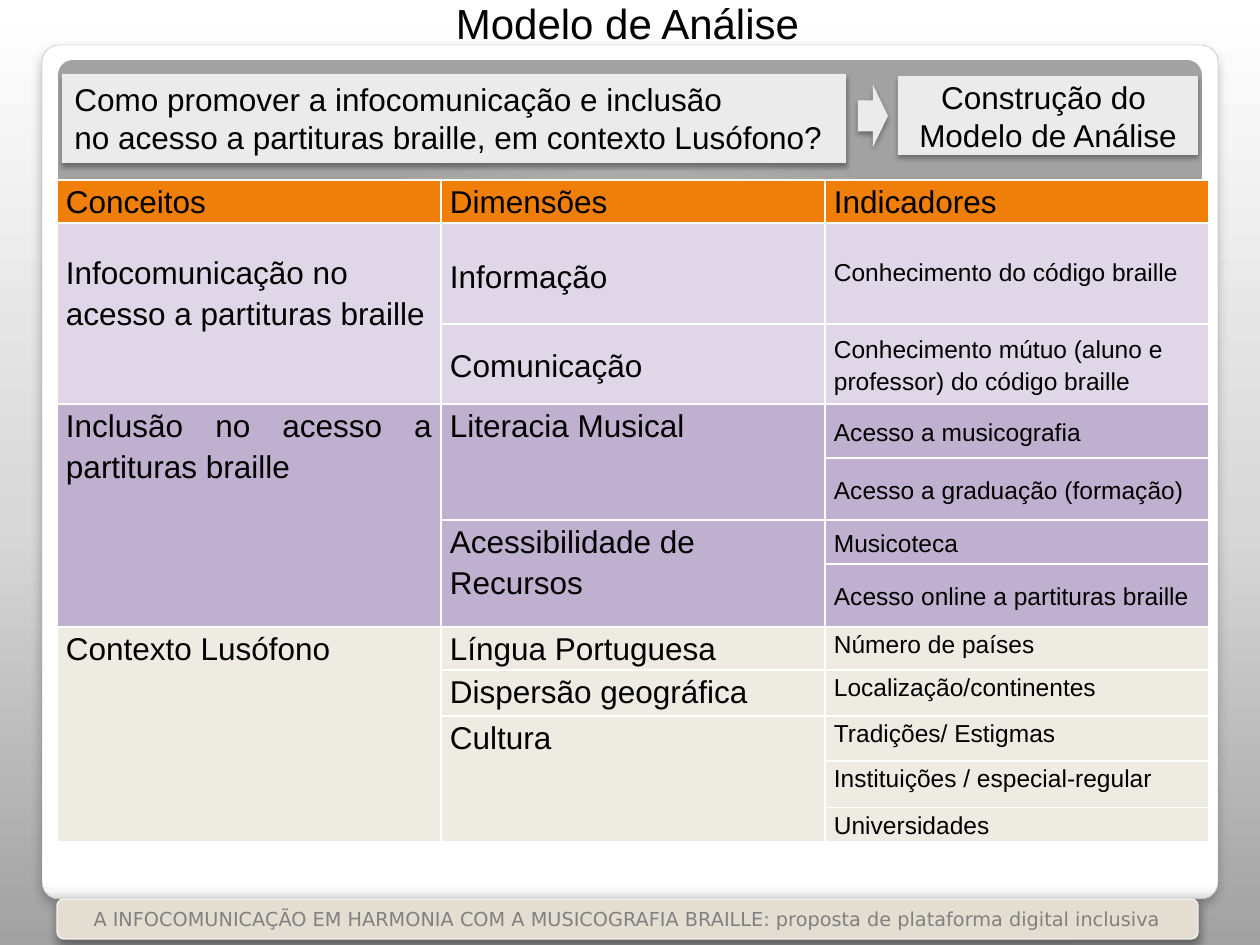
"""Build the analysis model slide: research question, arrow and concept table."""
from lxml import etree
from pptx import Presentation
from pptx.dml.color import RGBColor
from pptx.enum.shapes import MSO_SHAPE
from pptx.enum.text import MSO_ANCHOR, MSO_AUTO_SIZE, PP_ALIGN
from pptx.oxml.ns import qn
from pptx.util import Emu, Pt

ROUND, RECT, ARROW = MSO_SHAPE.ROUNDED_RECTANGLE, MSO_SHAPE.RECTANGLE, MSO_SHAPE.RIGHT_ARROW
TOP, MIDDLE = MSO_ANCHOR.TOP, MSO_ANCHOR.MIDDLE
LEFT, CENTER, JUSTIFY = PP_ALIGN.LEFT, PP_ALIGN.CENTER, PP_ALIGN.JUSTIFY
PX = 914400 / 126
COLORS = {
    "white": "FFFFFF", "text": "000000", "box": "EBEBEB", "panel line": "A4A4A4",
    "footer": "E3DED1", "footer line": "F2F2F2", "footer text": "808080",
    "header": "F07F09", "lilac": "DFD7E7", "violet": "BFB0CF", "sand": "EEEBE3",
}


def paint_gradient(owner, stops, direction, **settings):
    owner.fill.gradient()
    grad = next(owner.element.iter(qn("a:gradFill")))
    for child in list(grad):
        grad.remove(child)
    stop_list = etree.SubElement(grad, qn("a:gsLst"))
    for position, color in stops:
        stop = etree.SubElement(stop_list, qn("a:gs"), pos=str(position * 1000))
        etree.SubElement(stop, qn("a:srgbClr"), val=color)
    return etree.SubElement(grad, qn(direction), **settings)


def add_box(preset, frame, fill=None, line=None, shadow=None):
    box = page.shapes.add_shape(preset, *[Emu(round(n * PX)) for n in frame])
    box.shadow.inherit = False
    if fill:
        box.fill.solid()
        box.fill.fore_color.rgb = RGBColor.from_string(COLORS[fill])
    if line:
        box.line.color.rgb = RGBColor.from_string(COLORS[line[0]])
        box.line.width = Pt(line[1])
    else:
        box.line.fill.background()
    if shadow:
        opacity, blur, distance = shadow
        effects = box.element.spPr.find(qn("a:effectLst"))
        outer = etree.SubElement(
            effects, qn("a:outerShdw"), blurRad=str(Pt(blur)), dist=str(Pt(distance)),
            dir="5400000", algn="ctr", rotWithShape="0")
        tint = etree.SubElement(outer, qn("a:srgbClr"), val=COLORS["text"])
        etree.SubElement(tint, qn("a:alpha"), val=str(opacity * 1000))
    return box


deck = Presentation()
deck.slide_width, deck.slide_height = Emu(round(1260 * PX)), Emu(round(945 * PX))
page = deck.slides.add_slide(deck.slide_layouts[5])
page.background.fill.gradient()
background = next(page.element.iter(qn("p:bgPr")))
page.background.fill.gradient_angle = 90
stops = background.find(qn("a:gradFill")).find(qn("a:gsLst"))
for stop in list(stops):
    stops.remove(stop)
for position, color in ((0, "A2A2A2"), (45, "D8D8D8"), (100, "FFFFFF")):
    stop = etree.SubElement(stops, qn("a:gs"), pos=str(position * 1000))
    etree.SubElement(stop, qn("a:srgbClr"), val=color)

panel = add_box(ROUND, (42, 45, 1176, 854), line=("panel line", 0.16), shadow=(25, 6, 4))
panel.adjustments[0] = 0.02
paint_gradient(panel, ((0, "FFFFFF"), (98, "FFFFFF"), (99, "F7F7F7"), (100, "DADADA")),
               "a:lin", ang="5400000", scaled="0")
band = add_box(ROUND, (58, 60, 1144, 756))
band.adjustments[0] = 0.02
glow = paint_gradient(band, ((0, "FFFFFF"), (55, "E1E1E1"), (100, "A2A2A2")),
                      "a:path", path="circle")
etree.SubElement(glow, qn("a:fillToRect"), l="50000", t="175000", r="50000", b="-75000")

footer = add_box(ROUND, (57, 899, 1141, 40), "footer", ("footer line", 0.75), (40, 5.2, 3))
title = page.shapes.title
title.left, title.top, title.width, title.height = [
    Emu(round(n * PX)) for n in (441, -9, 373, 63)]
page.shapes.element.append(title.element)
box_shadow = (35, 3.1, 1.8)
goal = add_box(RECT, (898, 76, 300, 79), "box", shadow=box_shadow)
question = add_box(RECT, (62, 74, 784, 89), "box", shadow=box_shadow)
add_box(ARROW, (858, 85, 30, 62), "box", shadow=box_shadow)

texts = (
    (footer, CENTER, MIDDLE, 11, "DejaVu Sans", "footer text", (
        "A INFOCOMUNICAÇÃO EM HARMONIA COM A MUSICOGRAFIA BRAILLE: "
        "proposta de plataforma digital inclusiva",)),
    (title, CENTER, TOP, 24, "Arial", "text", ("Modelo de Análise",)),
    (goal, CENTER, MIDDLE, 18, "Arial", "text", ("Construção do ", "Modelo de Análise")),
    (question, JUSTIFY, TOP, 18, "Arial", "text", (
        "Como promover a infocomunicação e inclusão ",
        "no acesso a partituras braille, em contexto Lusófono?")),
)
for box, align, anchor, size, font, color, lines in texts:
    frame = box.text_frame
    frame.word_wrap = box is not title
    frame.auto_size = MSO_AUTO_SIZE.NONE
    frame.vertical_anchor = anchor
    para = frame.paragraphs[0]
    for index, line in enumerate(lines):
        if index and box is goal:
            para.add_line_break()
        elif index:
            para = frame.add_paragraph()
        para.alignment = align
        span = para.add_run()
        span.text = line
        span.font.size = Pt(size)
        span.font.name = font
        span.font.color.rgb = RGBColor.from_string(COLORS[color])

row_heights = (43, 101, 80, 54, 62, 44, 63, 43, 46, 45, 47, 34)
row_fills = ["header"] + ["lilac"] * 2 + ["violet"] * 4 + ["sand"] * 5
table = page.shapes.add_table(
    len(row_heights), 3, *[Emu(round(n * PX)) for n in (57, 180, 1152, sum(row_heights))]).table
table.first_row = table.horz_banding = False
for column in table.columns:
    column.width = Emu(round(384 * PX))
for row, height in zip(table.rows, row_heights):
    row.height = Emu(round(height * PX))
for row, fill in zip(table.rows, row_fills):
    for cell in row.cells:
        properties = cell._tc.get_or_add_tcPr()
        for side in ("L", "R", "T", "B"):
            border = etree.SubElement(properties, qn("a:ln" + side), w=str(Pt(1)))
            paint = etree.SubElement(border, qn("a:solidFill"))
            etree.SubElement(paint, qn("a:srgbClr"), val=COLORS["white"])
        cell.fill.solid()
        cell.fill.fore_color.rgb = RGBColor.from_string(COLORS[fill])

entries = (
    (0, 0, 1, 18, TOP, 0, "Conceitos"),
    (0, 1, 1, 18, TOP, 0, "Dimensões"),
    (0, 2, 1, 18, TOP, 0, "Indicadores"),
    (1, 0, 2, 18, TOP, 28, "Infocomunicação no acesso a partituras braille"),
    (1, 1, 1, 18, TOP, 32, "Informação"),
    (1, 2, 1, 14, TOP, 32, "Conhecimento do código braille"),
    (2, 1, 1, 18, MIDDLE, 0, "Comunicação"),
    (2, 2, 1, 14, MIDDLE, 0, "Conhecimento mútuo (aluno e professor) do código braille"),
    (3, 0, 4, 18, TOP, 0, "Inclusão no acesso a partituras braille"),
    (3, 1, 2, 18, TOP, 0, "Literacia Musical"),
    (3, 2, 1, 14, MIDDLE, 0, "Acesso a musicografia"),
    (4, 2, 1, 14, MIDDLE, 0, "Acesso a graduação (formação)"),
    (5, 1, 2, 18, TOP, 0, "Acessibilidade de Recursos"),
    (5, 2, 1, 14, MIDDLE, 0, "Musicoteca"),
    (6, 2, 1, 14, MIDDLE, 0, "Acesso online a partituras braille"),
    (7, 0, 5, 18, TOP, 0, "Contexto Lusófono"),
    (7, 1, 1, 18, TOP, 0, "Língua Portuguesa"),
    (7, 2, 1, 14, TOP, 0, "Número de países"),
    (8, 1, 1, 18, TOP, 0, "Dispersão geográfica"),
    (8, 2, 1, 14, TOP, 0, "Localização/continentes"),
    (9, 1, 3, 18, TOP, 0, "Cultura"),
    (9, 2, 1, 14, TOP, 0, "Tradições/ Estigmas"),
    (10, 2, 1, 14, TOP, 0, "Instituições / especial-regular"),
    (11, 2, 1, 14, TOP, 0, "Universidades"),
)
for row, column, rows, size, anchor, inset, text in entries:
    cell = table.cell(row, column)
    if rows > 1:
        cell.merge(table.cell(row + rows - 1, column))
    cell.vertical_anchor = anchor
    cell.margin_left = cell.margin_right = Emu(round(9 * PX))
    cell.margin_top, cell.margin_bottom = Emu(round(inset * PX)), 0
    para = cell.text_frame.paragraphs[0]
    para.alignment = JUSTIFY if text.startswith("Inclusão") else LEFT
    para.line_spacing = 1.15
    span = para.add_run()
    span.text = text
    span.font.size = Pt(size)
    span.font.name = "Arial"
    span.font.color.rgb = RGBColor.from_string(COLORS["text"])

deck.save("out.pptx")
